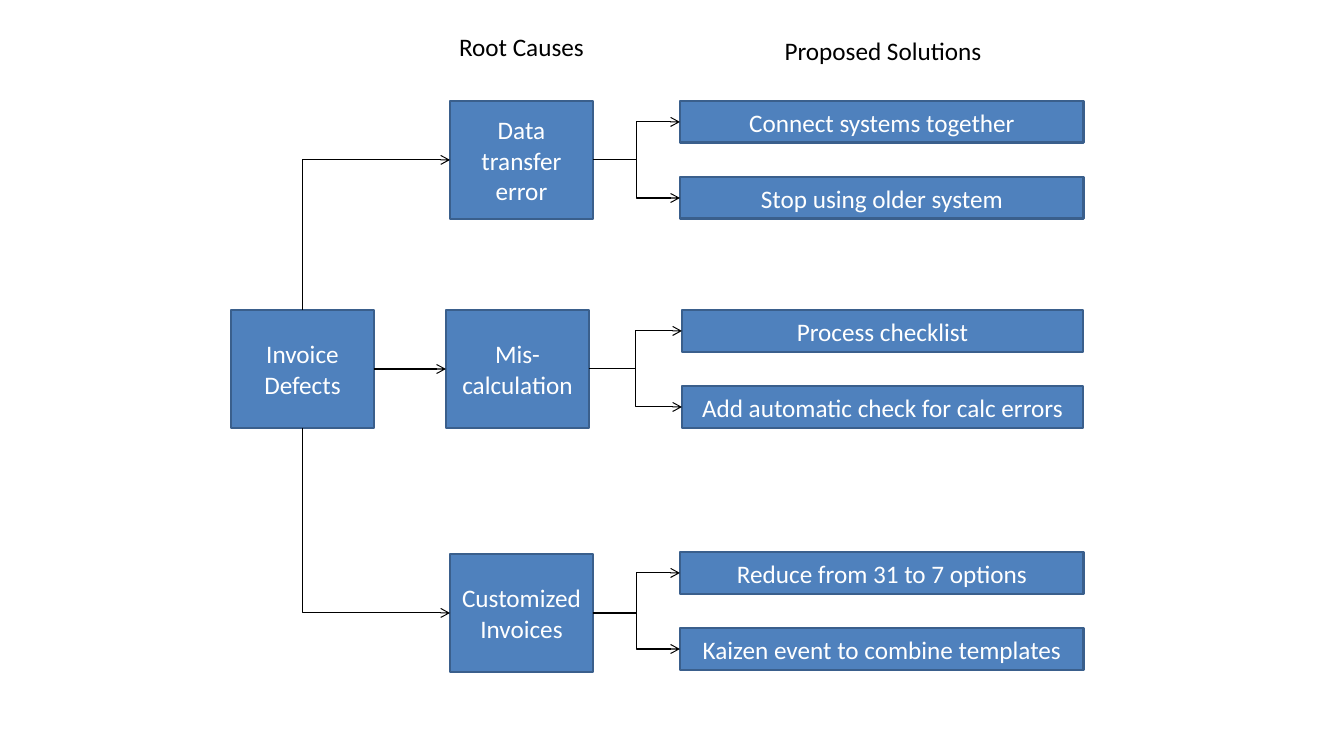
"""Builds a cause tree slide: invoice defects, root causes and proposed solutions."""
from pptx import Presentation
from pptx.dml.color import RGBColor
from pptx.enum.shapes import MSO_CONNECTOR, MSO_SHAPE
from pptx.enum.text import MSO_ANCHOR, PP_ALIGN
from pptx.oxml.ns import qn
from pptx.util import Pt
from lxml.etree import SubElement

ROOT = ("Invoice Defects", 231, 310)
HEADERS = [
    ("Root Causes", 446, 26, 151),
    ("Proposed Solutions", 753, 30, 260),
]
BRANCHES = [
    {"cause": ("Data transfer error", 450, 101), "at": (680, 101), "width": 404,
     "solutions": ["Connect systems together", "Stop using older system"]},
    {"cause": ("Mis-calculation", 446, 310), "at": (682, 310), "width": 401,
     "solutions": ["Process checklist", "Add automatic check for calc errors"]},
    {"cause": ("Customized Invoices", 450, 554), "at": (680, 552), "width": 404,
     "solutions": ["Reduce from 31 to 7 options", "Kaizen event to combine templates"]},
]
BOX_W, BOX_H = 143, 118
SOLUTION_H, SOLUTION_PITCH = 42, 76
HEADER_H = 40
FILL, EDGE, WHITE, BLACK = "4F81BD", "3A5F8C", "FFFFFF", "000000"
TOP, LEFT, BOTTOM, RIGHT = range(4)


def px(n):
    return round(n * 914400 / 100.8)


def rgb(color):
    return RGBColor.from_string(color)


def write(sp, text, color):
    tf = sp.text_frame
    tf.word_wrap = True
    p = tf.paragraphs[0]
    p.text = text
    p.alignment = PP_ALIGN.CENTER
    p.font.name, p.font.size = "Calibri", Pt(18)
    p.font.color.rgb = rgb(color)


def add_box(s, text, x, y, w=BOX_W, h=BOX_H):
    sp = s.shapes.add_shape(MSO_SHAPE.RECTANGLE, px(x), px(y), px(w), px(h))
    sp.shadow.inherit = False
    sp.fill.solid()
    sp.fill.fore_color.rgb = rgb(FILL)
    sp.line.color.rgb = rgb(EDGE)
    sp.line.width = Pt(2)
    sp.text_frame.vertical_anchor = MSO_ANCHOR.MIDDLE
    write(sp, text, WHITE)
    return sp


def add_arrow(s, start, end, side=RIGHT):
    c = s.shapes.add_connector(MSO_CONNECTOR.ELBOW, 0, 0, 0, 0)
    c.begin_connect(start, side)
    c.end_connect(end, LEFT)
    c.line.color.rgb = rgb(BLACK)
    c.line.width = Pt(0.75)
    spPr = c._element.spPr
    SubElement(spPr.find(qn("a:ln")), qn("a:tailEnd"), type="arrow")
    SubElement(spPr, qn("a:effectLst"))
    if side != RIGHT:
        turn_corner(c, side)


def turn_corner(c, side):
    spPr = c._element.spPr
    spPr.find(qn("a:prstGeom")).set("prst", "bentConnector2")
    x, y, w, h = c.left, c.top, c.width, c.height
    c.left, c.top = x + (w - h) // 2, y + (h - w) // 2
    c.width, c.height = h, w
    xfrm = spPr.find(qn("a:xfrm"))
    xfrm.set("rot", str((90 if side == TOP else 270) * 60000))
    xfrm.set("flipH", "1")
    xfrm.set("flipV", "1" if side == TOP else "0")


def main():
    prs = Presentation()
    prs.slide_width, prs.slide_height = px(1344), px(756)
    s = prs.slides.add_slide(prs.slide_layouts[6])
    for text, x, y, w in HEADERS:
        write(s.shapes.add_textbox(px(x), px(y), px(w), px(HEADER_H)), text, BLACK)
    root = add_box(s, *ROOT)
    for branch, side in zip(BRANCHES, (TOP, RIGHT, BOTTOM)):
        cause = add_box(s, *branch["cause"])
        add_arrow(s, root, cause, side)
        x, y = branch["at"]
        for i, text in enumerate(branch["solutions"]):
            solution = add_box(s, text, x, y + i * SOLUTION_PITCH, branch["width"], SOLUTION_H)
            add_arrow(s, cause, solution)
    prs.save("out.pptx")


if __name__ == "__main__":
    main()
